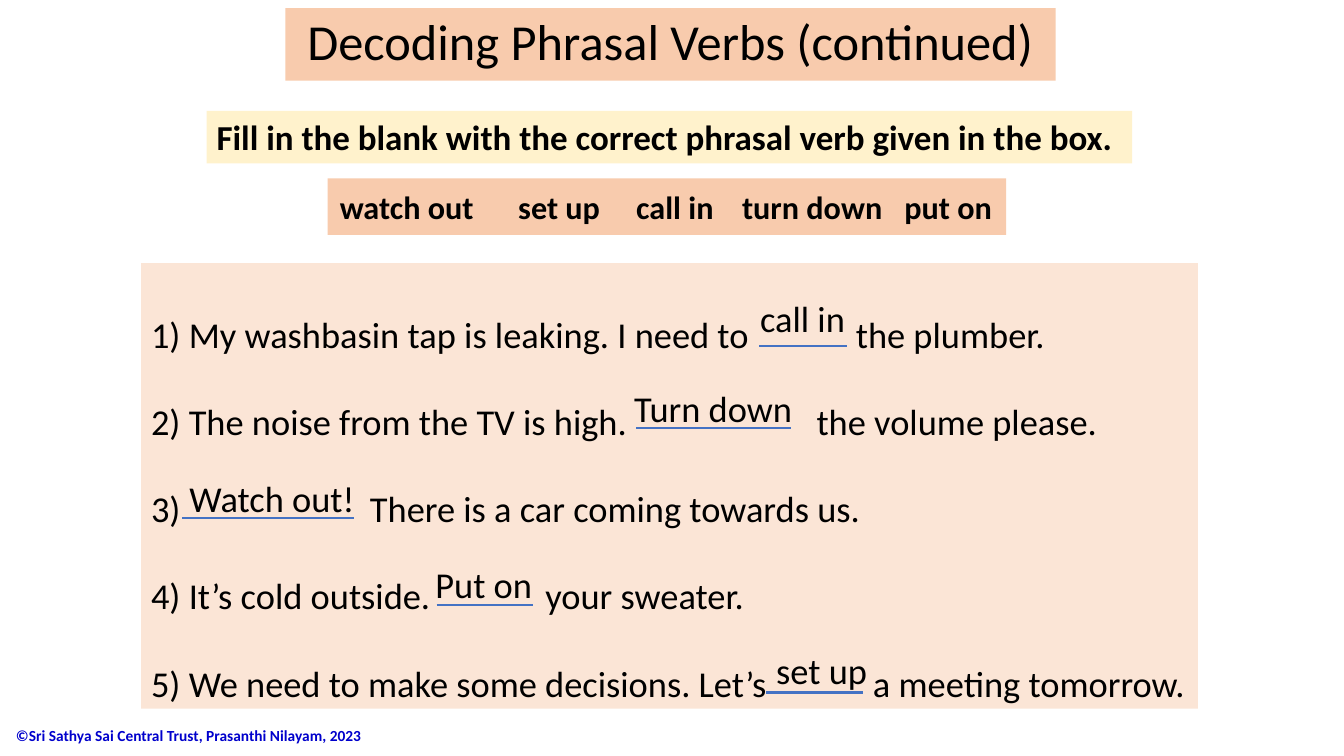
from lxml.etree import SubElement
from pptx import Presentation
from pptx.dml.color import RGBColor
from pptx.enum.shapes import MSO_CONNECTOR
from pptx.enum.text import MSO_ANCHOR, MSO_AUTO_SIZE, PP_ALIGN
from pptx.oxml.ns import qn
from pptx.util import Inches, Pt

TITLE = "Decoding Phrasal Verbs (continued)"
INSTRUCTION = "Fill in the blank with the correct phrasal verb given in the box."
VERBS = ["watch out", "set up", "call in", "turn down", "put on"]
VERB_STOPS = [1.77, 2.94, 3.99, 5.6]
SENTENCES = [
    ("1) My washbasin tap is leaking. I need to", "the plumber.", 6.99),
    ("2) The noise from the TV is high.", "the volume please.", 6.6),
    ("3)", "There is a car coming towards us.", 2.17),
    ("4) It’s cold outside.", "your sweater.", 3.91),
    ("5) We need to make some decisions. Let’s", "a meeting tomorrow.", 7.16),
]
ANSWERS = [
    ("call in", (7.44, 2.89, 1.05), (7.53, 8.4, 3.43)),
    ("Turn down", (6.19, 3.78, 1.78), (6.31, 7.85, 4.25)),
    ("Watch out!", (1.78, 4.67, 1.86), (1.81, 3.51, 5.14)),
    ("Put on", (4.22, 5.53, 1.17), (4.33, 5.29, 6)),
    ("set up", (7.6, 6.38, 1.26), (7.6, 8.56, 6.87)),
]
COPYRIGHT = "©Sri Sathya Sai Central Trust, Prasanthi Nilayam, 2023"

FONT = "Calibri"
BLACK = RGBColor(0x00, 0x00, 0x00)
COPYRIGHT_BLUE = RGBColor(0x00, 0x00, 0xCC)
LINE_BLUE = RGBColor(0x44, 0x72, 0xC4)
ORANGE = RGBColor(0xF8, 0xCB, 0xAD)
PALE_ORANGE = RGBColor(0xFB, 0xE5, 0xD6)
YELLOW = RGBColor(0xFF, 0xF2, 0xCC)


def prepare(shape, left, top, width, height, fill=None, wrap=False, anchor=MSO_ANCHOR.TOP):
    shape.left, shape.top = Inches(left), Inches(top)
    shape.width, shape.height = Inches(width), Inches(height)
    if fill is not None:
        shape.fill.solid()
        shape.fill.fore_color.rgb = fill
    frame = shape.text_frame
    frame.auto_size = MSO_AUTO_SIZE.NONE
    frame.word_wrap = wrap
    frame.vertical_anchor = anchor
    return frame


def add_box(slide, *args, **options):
    return prepare(slide.shapes.add_textbox(0, 0, 0, 0), *args, **options)


def write(paragraph, text, size, bold=False, color=BLACK):
    run = paragraph.add_run()
    run.text = text
    run.font.name = FONT
    run.font.size = Pt(size)
    run.font.bold = bold
    run.font.color.rgb = color


def set_tabs(paragraph, stops):
    tab_list = SubElement(paragraph._p.get_or_add_pPr(), qn("a:tabLst"))
    for stop in stops:
        SubElement(tab_list, qn("a:tab"), pos=str(Inches(stop)), algn="l")


def add_sentences(frame):
    frame.margin_right = Inches(0)
    for index, (start, end, stop) in enumerate(SENTENCES):
        paragraph = frame.add_paragraph() if index else frame.paragraphs[0]
        paragraph.line_spacing = 2.0
        set_tabs(paragraph, [stop])
        write(paragraph, f"{start}\t{end}", 26)


def add_blank(slide, start, end, y):
    line = slide.shapes.add_connector(
        MSO_CONNECTOR.STRAIGHT, Inches(start), Inches(y), Inches(end), Inches(y))
    line.line.color.rgb = LINE_BLUE
    line.line.width = Pt(1.5)
    SubElement(line._element.spPr, qn("a:effectLst"))


def main():
    presentation = Presentation()
    presentation.slide_width = Inches(13.33)
    presentation.slide_height = Inches(7.5)
    slide = presentation.slides.add_slide(presentation.slide_layouts[5])

    title = prepare(slide.shapes.title, 2.83, 0.08, 7.64, 0.72, ORANGE, True, MSO_ANCHOR.MIDDLE)
    title.paragraphs[0].alignment = PP_ALIGN.CENTER
    title.paragraphs[0].line_spacing = 0.9
    write(title.paragraphs[0], TITLE, 36)

    instruction = add_box(slide, 2.05, 1.1, 9.18, 0.52, YELLOW)
    write(instruction.paragraphs[0], INSTRUCTION, 25, bold=True)

    verbs = add_box(slide, 3.25, 1.77, 6.73, 0.56, ORANGE, True, MSO_ANCHOR.MIDDLE)
    verbs.margin_left = Inches(0.12)
    verbs.margin_right = Inches(0)
    set_tabs(verbs.paragraphs[0], VERB_STOPS)
    write(verbs.paragraphs[0], "\t".join(VERBS), 23, bold=True)

    add_sentences(add_box(slide, 1.4, 2.61, 10.48, 4.42, PALE_ORANGE, True))

    for answer, (left, top, width), blank in ANSWERS:
        add_blank(slide, *blank)
        write(add_box(slide, left, top, width, 0.54).paragraphs[0], answer, 26)

    footer = add_box(slide, 0.06, 7.09, 3.81, 0.41, anchor=MSO_ANCHOR.MIDDLE)
    write(footer.paragraphs[0], COPYRIGHT, 11, bold=True, color=COPYRIGHT_BLUE)

    presentation.save("out.pptx")


if __name__ == "__main__":
    main()
